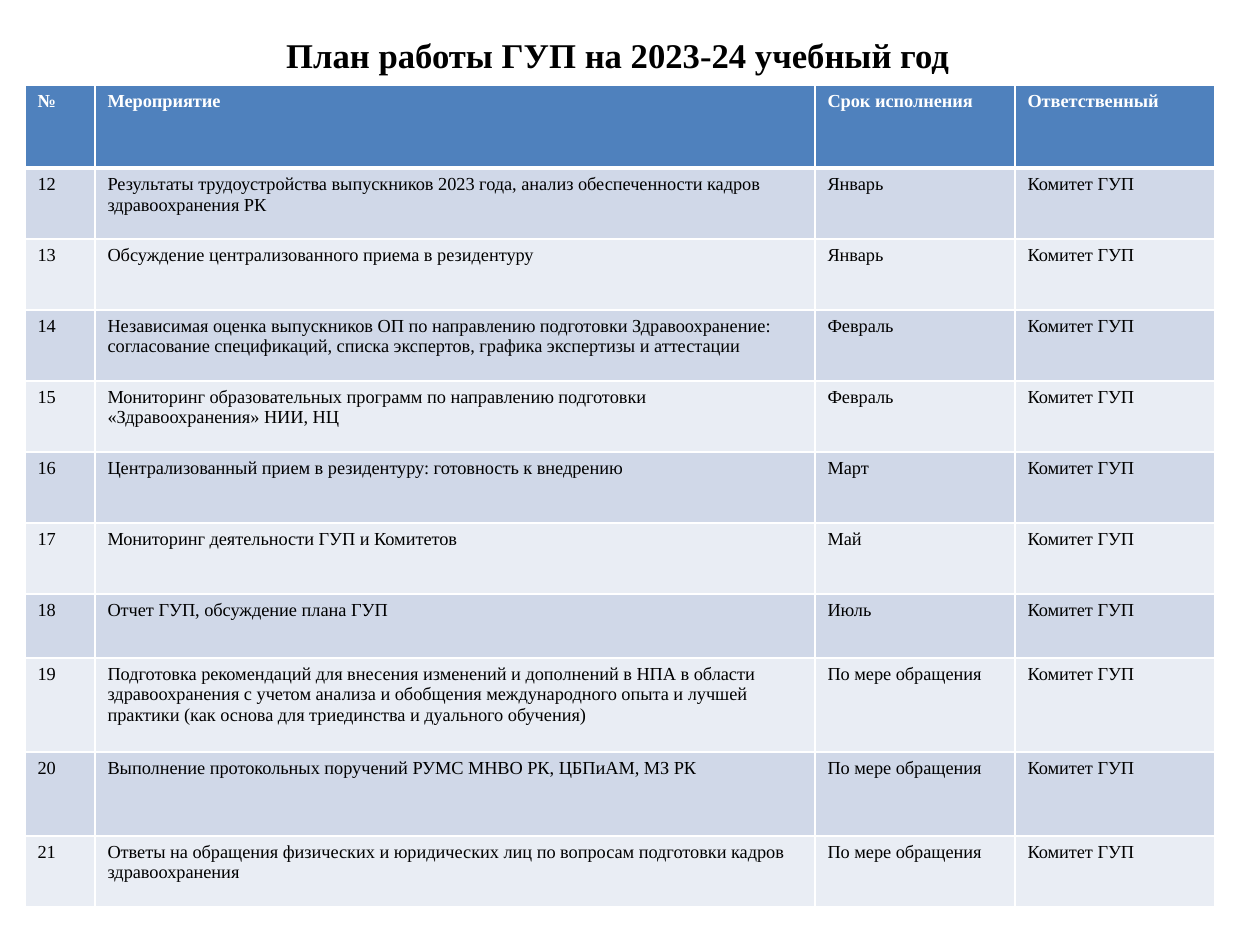
from dataclasses import dataclass

from lxml.etree import SubElement
from pptx import Presentation
from pptx.dml.color import RGBColor
from pptx.enum.text import MSO_ANCHOR, PP_ALIGN
from pptx.oxml.ns import qn
from pptx.util import Emu, Pt

EMU_PER_PX = 914400 // 126


def px(length):
    return Emu(length * EMU_PER_PX)


@dataclass(frozen=True)
class Theme:
    font: str = "Times New Roman"
    title_size: float = 19.8
    cell_size: float = 10.5
    ink: str = "000000"
    paper: str = "FFFFFF"
    header: str = "4F81BD"
    bands: tuple = ("D0D8E8", "E9EDF4")
    rule: int = 1
    header_rule: int = 3


class PlanSlide:
    def __init__(self, deck, theme):
        self.theme = theme
        self.slide = deck.slides.add_slide(deck.slide_layouts[6])

    def add_text(self, paragraph, text, size, color, bold=False):
        run = paragraph.add_run()
        run.text = text
        run.font.name = self.theme.font
        run.font.size = Pt(size)
        run.font.bold = bold
        run.font.color.rgb = RGBColor.from_string(color)

    def title(self, text, left, top, width, height):
        frame = self.slide.shapes.add_textbox(
            px(left), px(top), px(width), px(height)).text_frame
        frame.word_wrap = True
        frame.vertical_anchor = MSO_ANCHOR.MIDDLE
        heading = frame.paragraphs[0]
        heading.alignment = PP_ALIGN.CENTER
        self.add_text(heading, text, self.theme.title_size, self.theme.ink, bold=True)

    def border(self, cell, top, bottom):
        properties = cell._tc.get_or_add_tcPr()
        side = self.theme.rule
        for tag, weight in (("lnL", side), ("lnR", side), ("lnT", top), ("lnB", bottom)):
            line = SubElement(properties, qn(f"a:{tag}"), w=str(Pt(weight)))
            fill = SubElement(line, qn("a:solidFill"))
            SubElement(fill, qn("a:srgbClr"), val=self.theme.paper)

    def cell(self, cell, text, row):
        theme = self.theme
        is_header = row == 0
        self.border(cell,
                    top=theme.header_rule if row == 1 else theme.rule,
                    bottom=theme.header_rule if is_header else theme.rule)
        background = theme.header if is_header else theme.bands[(row - 1) % 2]
        cell.fill.solid()
        cell.fill.fore_color.rgb = RGBColor.from_string(background)
        color = theme.paper if is_header else theme.ink
        self.add_text(cell.text_frame.paragraphs[0], text, theme.cell_size, color, is_header)

    def table(self, records, left, top, widths, heights):
        table = self.slide.shapes.add_table(
            len(heights), len(widths), px(left), px(top),
            px(sum(widths)), px(sum(heights))).table
        for column, width in zip(table.columns, widths):
            column.width = px(width)
        for row, height in zip(table.rows, heights):
            row.height = px(height)
        for row, record in enumerate(records):
            for column, text in enumerate(record):
                self.cell(table.cell(row, column), text, row)


HEADER = ("№", "Мероприятие", "Срок исполнения", "Ответственный")
COMMITTEE = "Комитет ГУП"
ON_REQUEST = "По мере обращения"
FIRST_NUMBER = 12
ACTIVITIES = (
    ("Результаты трудоустройства выпускников 2023 года, анализ обеспеченности "
     "кадров здравоохранения РК", "Январь"),
    ("Обсуждение централизованного приема в резидентуру", "Январь"),
    ("Независимая оценка выпускников ОП по направлению подготовки Здравоохранение: "
     "согласование спецификаций, списка экспертов, графика экспертизы и аттестации",
     "Февраль"),
    ("Мониторинг образовательных программ по направлению подготовки "
     "«Здравоохранения» НИИ, НЦ", "Февраль"),
    ("Централизованный прием в резидентуру: готовность к внедрению", "Март"),
    ("Мониторинг деятельности ГУП и Комитетов", "Май"),
    ("Отчет ГУП, обсуждение плана ГУП", "Июль"),
    ("Подготовка рекомендаций для внесения изменений и дополнений в НПА в области "
     "здравоохранения с учетом анализа и обобщения международного опыта и лучшей "
     "практики (как основа для триединства и дуального обучения)", ON_REQUEST),
    ("Выполнение протокольных поручений РУМС МНВО РК, ЦБПиАМ, МЗ РК", ON_REQUEST),
    ("Ответы на обращения физических и юридических лиц по вопросам подготовки "
     "кадров здравоохранения", ON_REQUEST),
)
COLUMN_WIDTHS = (70, 720, 200, 200)
ROW_HEIGHTS = (83, *[71] * 6, 64, 94, 84, 71)


def main():
    deck = Presentation()
    deck.slide_width, deck.slide_height = px(1260), px(945)
    plan = PlanSlide(deck, Theme())
    plan.title("План работы ГУП на 2023-24 учебный год", 0, 25, 1235, 60)
    records = [HEADER] + [
        (str(number), activity, deadline, COMMITTEE)
        for number, (activity, deadline) in enumerate(ACTIVITIES, FIRST_NUMBER)]
    plan.table(records, 25, 85, COLUMN_WIDTHS, ROW_HEIGHTS)
    deck.save("out.pptx")


if __name__ == "__main__":
    main()
